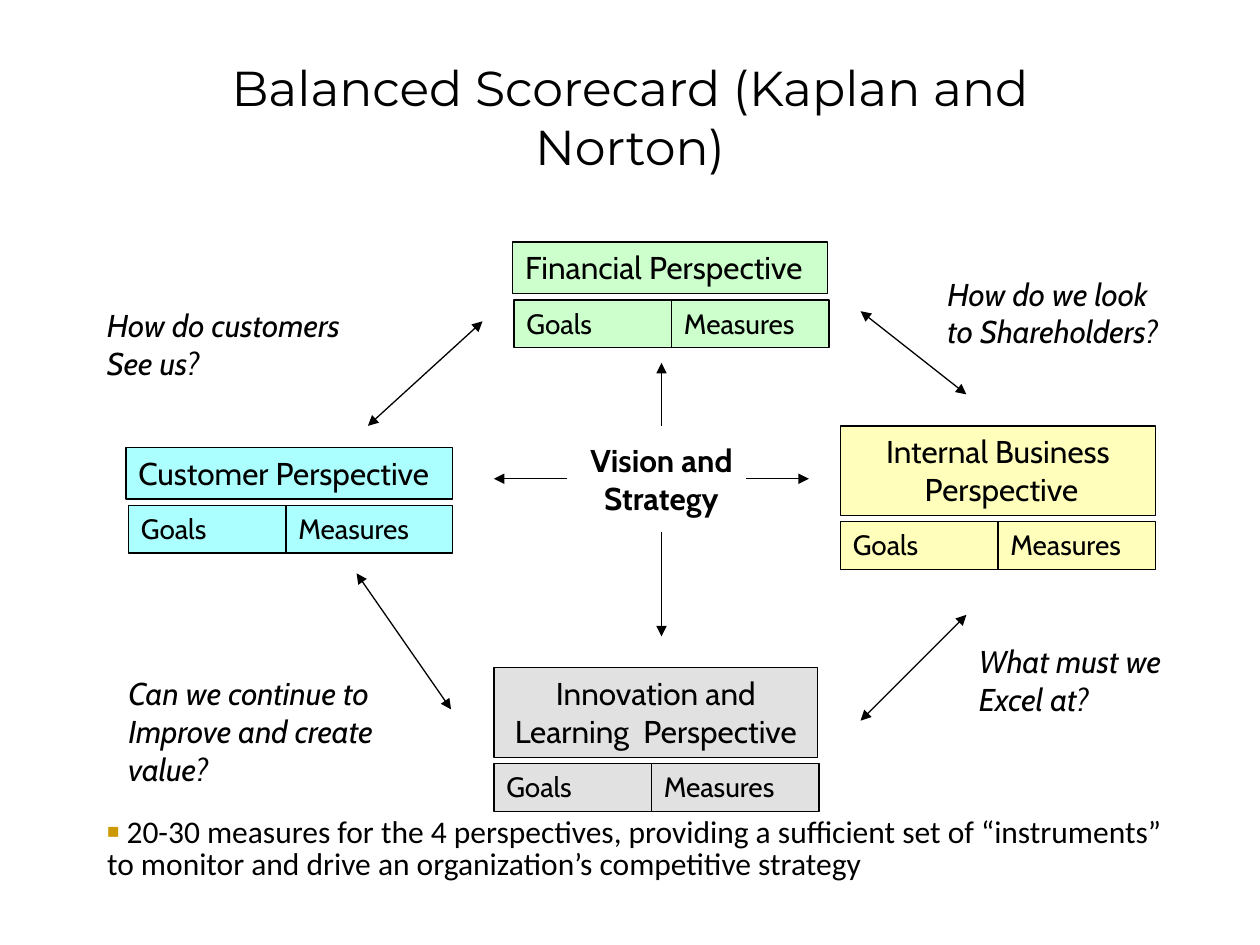
from dataclasses import dataclass

from lxml import etree
from pptx import Presentation
from pptx.dml.color import RGBColor
from pptx.enum.shapes import MSO_CONNECTOR, MSO_SHAPE
from pptx.enum.text import MSO_ANCHOR, MSO_AUTO_SIZE, PP_ALIGN
from pptx.oxml.ns import qn
from pptx.util import Inches, Pt

RECTANGLE = MSO_SHAPE.RECTANGLE
STRAIGHT = MSO_CONNECTOR.STRAIGHT
TOP, MIDDLE = MSO_ANCHOR.TOP, MSO_ANCHOR.MIDDLE
LEFT, CENTER = PP_ALIGN.LEFT, PP_ALIGN.CENTER
NO_AUTOFIT = MSO_AUTO_SIZE.NONE
LEFT_SIDE = 1


@dataclass(frozen=True)
class Theme:
    ink: str = "000000"
    bullet: str = "CC9900"
    financial: str = "CCFFCC"
    customer: str = "ABFFFF"
    innovation: str = "E1E1E1"
    internal: str = "FFFFBB"
    title_font: str = "Montserrat"
    diagram_font: str = "Cabin"
    body_font: str = "Calibri"
    title_size: int = 28
    text_size: int = 18
    cell_size: int = 16
    line_width: float = 0.75


class ScorecardSlide:
    """Draws the parts of a balanced scorecard on one slide in one theme."""

    def __init__(self, slide, theme):
        self.slide = slide
        self.theme = theme

    def place(self, shape, left, top, width, height):
        shape.left, shape.top = Inches(left), Inches(top)
        shape.width, shape.height = Inches(width), Inches(height)

    def add_lines(self, shape, lines, font, size, align=LEFT, anchor=TOP, bold=False, italic=False):
        frame = shape.text_frame
        frame.word_wrap = True
        frame.auto_size = NO_AUTOFIT
        frame.vertical_anchor = anchor
        for index, line in enumerate(lines):
            paragraph = frame.add_paragraph() if index else frame.paragraphs[0]
            paragraph.alignment = align
            run = paragraph.add_run()
            run.text = line
            run.font.name = font
            run.font.size = Pt(size)
            run.font.bold = bold
            run.font.italic = italic
            run.font.color.rgb = RGBColor.from_string(self.theme.ink)

    def title(self, text, *place):
        heading = self.slide.shapes.title
        self.place(heading, *place)
        self.add_lines(heading, [text], self.theme.title_font, self.theme.title_size,
                       CENTER, MIDDLE)

    def bullet(self, text, *place):
        body = self.slide.placeholders[1]
        self.place(body, *place)
        paragraph = body.text_frame.paragraphs[0]
        properties = paragraph._p.get_or_add_pPr()
        properties.set("marL", "0")
        properties.set("indent", "0")
        colour = etree.SubElement(properties, qn("a:buClr"))
        etree.SubElement(colour, qn("a:srgbClr"), val=self.theme.bullet)
        etree.SubElement(properties, qn("a:buSzPct"), val="65000")
        etree.SubElement(properties, qn("a:buFont"), typeface="Arial")
        etree.SubElement(properties, qn("a:buChar"), char="■")
        paragraph.space_before = Pt(0)
        paragraph.line_spacing = 0.85
        self.add_lines(body, [text], self.theme.body_font, self.theme.text_size)

    def cell(self, lines, fill, size, align, *place):
        box = self.slide.shapes.add_shape(RECTANGLE, *map(Inches, place))
        box.shadow.inherit = False
        box.fill.solid()
        box.fill.fore_color.rgb = RGBColor.from_string(fill)
        box.line.color.rgb = RGBColor.from_string(self.theme.ink)
        box.line.width = Pt(self.theme.line_width)
        self.add_lines(box, lines, self.theme.diagram_font, size, align)

    def perspective(self, lines, fill, left, top, width, row_left, measures_width):
        align = CENTER if len(lines) > 1 else LEFT
        height = 0.11 + 0.3 * len(lines)
        row_top = top + height + 0.05
        goals_width, row_height = 1.25, 0.38
        self.cell(lines, fill, self.theme.text_size, align, left, top, width, height)
        self.cell(["Goals"], fill, self.theme.cell_size, LEFT,
                  row_left, row_top, goals_width, row_height)
        self.cell(["Measures"], fill, self.theme.cell_size, LEFT,
                  row_left + goals_width, row_top, measures_width, row_height)

    def label(self, lines, *place, **style):
        box = self.slide.shapes.add_textbox(*map(Inches, place))
        self.add_lines(box, lines, self.theme.diagram_font, self.theme.text_size, **style)
        return box

    def arrow(self, start, end, double=False):
        line = self.slide.shapes.add_connector(STRAIGHT, *map(Inches, start + end))
        line.line.color.rgb = RGBColor.from_string(self.theme.ink)
        line.line.width = Pt(self.theme.line_width)
        outline = line.line._get_or_add_ln()
        for tip in ("a:headEnd", "a:tailEnd") if double else ("a:tailEnd",):
            etree.SubElement(outline, qn(tip), type="triangle")
        etree.SubElement(line._element.spPr, qn("a:effectLst"))
        return line


def main():
    theme = Theme()
    deck = Presentation()
    deck.slide_width, deck.slide_height = Inches(10), Inches(7.5)
    scorecard = ScorecardSlide(deck.slides.add_slide(deck.slide_layouts[1]), theme)

    scorecard.title("Balanced Scorecard (Kaplan and Norton)", 1.26, 0.3, 7.48, 1.25)

    perspectives = [
        (["Financial Perspective"], theme.financial, 4.07, 1.92, 2.5, 4.08, 1.25),
        (["Customer Perspective"], theme.customer, 1, 3.55, 2.59, 1.02, 1.32),
        (["Innovation and", "Learning  Perspective"], theme.innovation,
         3.92, 5.3, 2.57, 3.92, 1.33),
        (["Internal Business", " Perspective"], theme.internal, 6.67, 3.38, 2.5, 6.67, 1.25),
    ]
    for perspective in perspectives:
        scorecard.perspective(*perspective)

    perspective_links = [
        ((3.83, 2.55), (2.92, 3.38)),
        ((7.67, 4.88), (6.83, 5.72)),
        ((3.58, 5.63), (2.83, 4.55)),
        ((7.67, 3.13), (6.83, 2.47)),
    ]
    for start, end in perspective_links:
        scorecard.arrow(start, end, double=True)

    questions = [
        (["How do we look", "to Shareholders?"], 7.42, 2.13, 2.05, 0.7),
        (["What must we", "Excel at?"], 7.67, 5.05, 1.8, 0.7),
        (["Can we continue to", "Improve and create", "value?"], 0.92, 5.3, 2.45, 1),
        (["How do customers", "See us?"], 0.75, 2.38, 2.33, 0.7),
    ]
    for question in questions:
        scorecard.label(*question, italic=True)

    vision = scorecard.label(["Vision and", "Strategy"], 4.5, 3.45, 1.5, 0.7,
                             align=CENTER, bold=True)
    scorecard.arrow((5.25, 3.38), (5.25, 2.88))
    scorecard.arrow((5.25, 4.22), (5.25, 5.05))
    scorecard.arrow((5.92, 3.8), (6.42, 3.8))
    customer_arrow = scorecard.arrow((4.5, 3.8), (3.92, 3.8))
    customer_arrow.begin_connect(vision, LEFT_SIDE)

    scorecard.bullet(
        " 20-30 measures for the 4 perspectives, providing a sufficient set of “instruments” "
        "to monitor and drive an organization’s competitive strategy",
        0.75, 6.44, 8.83, 1.06)

    deck.save("out.pptx")


if __name__ == "__main__":
    main()
